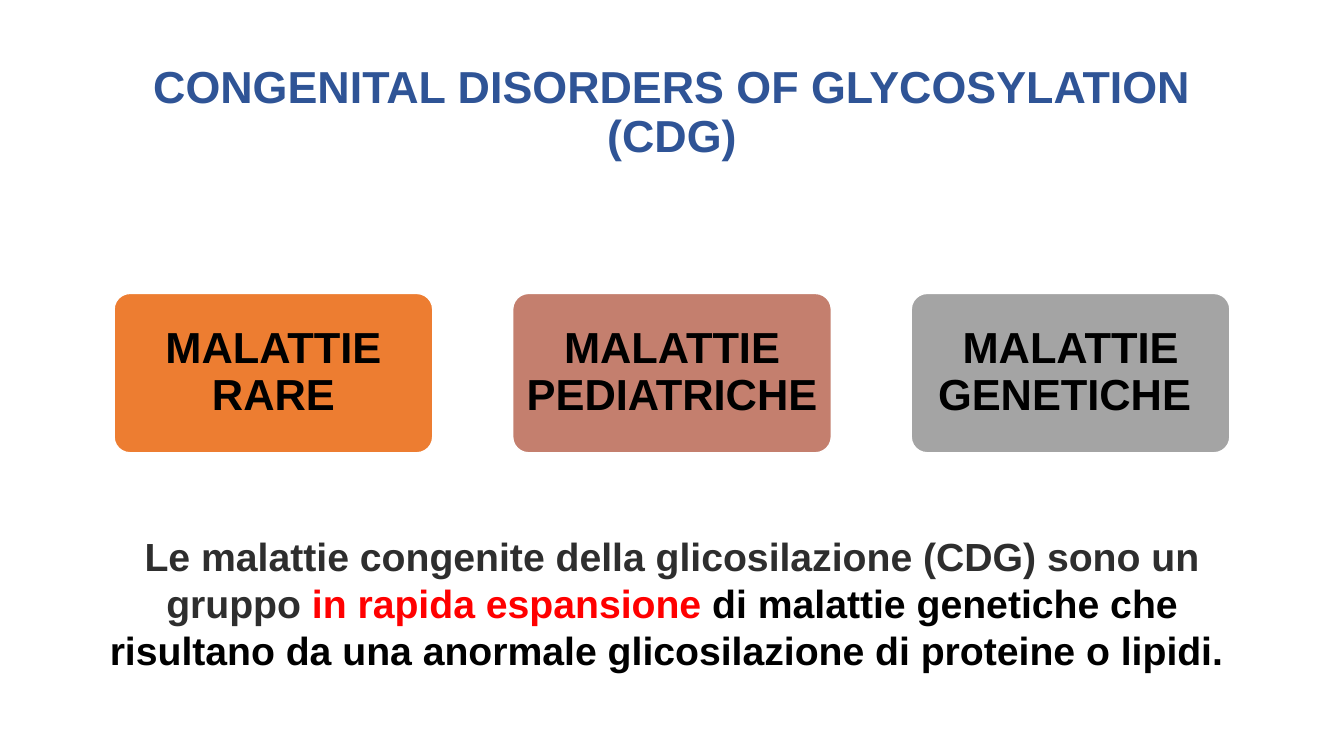
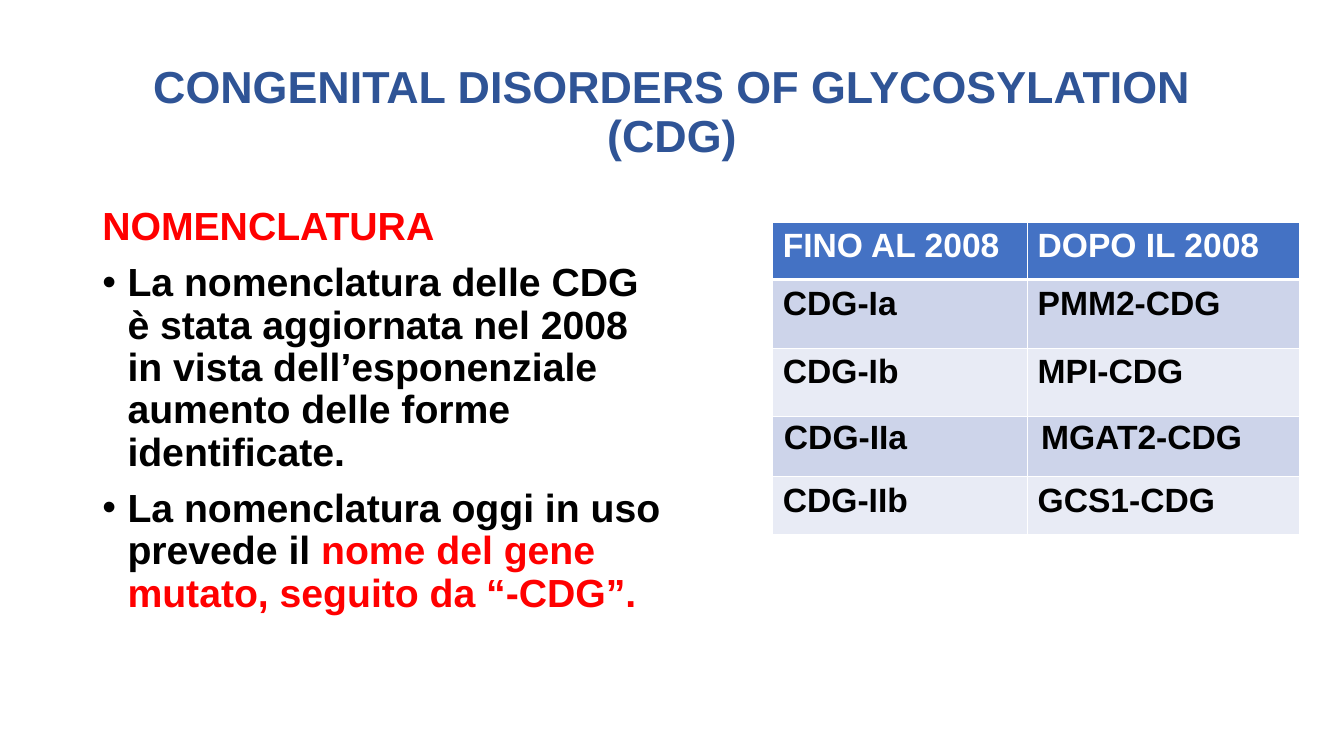
from dataclasses import dataclass

from lxml.etree import SubElement
from pptx import Presentation
from pptx.dml.color import RGBColor
from pptx.enum.shapes import MSO_SHAPE
from pptx.enum.text import MSO_ANCHOR, PP_ALIGN
from pptx.oxml.ns import qn
from pptx.util import Pt

FONT = "Arial"
COLORS = {
    "white": "FFFFFF", "black": "000000", "title": "2F5496", "red": "FF0000",
    "charcoal": "2E2E2E", "orange": "ED7D31", "rose": "C47F6E", "gray": "A4A4A4",
    "header": "4472C4", "band_dark": "CDD4EA", "band_light": "E8EBF5",
}


@dataclass(frozen=True)
class Span:
    text: str
    color: str = "black"


@dataclass(frozen=True)
class Category:
    label: str
    color: str


@dataclass(frozen=True)
class NameRow:
    old: str
    new: str
    height: float
    lefts: tuple[float, float] = (7.2, 7.2)
    top: float = 3.6


CATEGORIES = (
    Category("MALATTIE RARE", "orange"),
    Category("MALATTIE PEDIATRICHE ", "rose"),
    Category("MALATTIE GENETICHE ", "gray"),
)
NAME_ROWS = (
    NameRow("FINO AL 2008", "DOPO IL 2008", 41),
    NameRow("CDG-Ia", "PMM2-CDG", 49),
    NameRow("CDG-Ib", "MPI-CDG", 49),
    NameRow("CDG-IIa", "MGAT2-CDG", 43, (8, 9.7), 1.5),
    NameRow("CDG-IIb", "GCS1-CDG", 41),
)


def rgb(name: str) -> RGBColor:
    return RGBColor.from_string(COLORS[name])


def write(frame, spans: list[Span], *, size: float, align=PP_ALIGN.LEFT,
          spacing: float = 1.0, before: float = 0, bullet: bool = False,
          new_para: bool = False) -> None:
    para = frame.add_paragraph() if new_para else frame.paragraphs[0]
    para.alignment = align
    para.line_spacing = spacing
    para.space_before = Pt(before)
    if bullet:
        add_bullet(para)
    for span in spans:
        for index, line in enumerate(span.text.split("\n")):
            if index:
                para.add_line_break()
            run = para.add_run()
            run.text = line
            run.font.name = FONT
            run.font.size = Pt(size)
            run.font.bold = True
            run.font.color.rgb = rgb(span.color)


def add_bullet(para) -> None:
    properties = para._p.get_or_add_pPr()
    properties.set("marL", str(Pt(18)))
    properties.set("indent", str(-Pt(18)))
    color = SubElement(properties, qn("a:buClr"))
    SubElement(color, qn("a:srgbClr"), val=COLORS["black"])
    SubElement(properties, qn("a:buFont"), typeface=FONT)
    SubElement(properties, qn("a:buChar"), char="•")


def add_text_box(page, left: float, top: float, width: float, height: float,
                 anchor=MSO_ANCHOR.TOP):
    box = page.shapes.add_textbox(Pt(left), Pt(top), Pt(width), Pt(height))
    frame = box.text_frame
    frame.word_wrap = True
    frame.vertical_anchor = anchor
    return frame


def add_page(deck):
    page = deck.slides.add_slide(deck.slide_layouts[6])
    frame = add_text_box(page, 66, 28.75, 828, 104.4, MSO_ANCHOR.MIDDLE)
    write(frame, [Span("CONGENITAL DISORDERS OF GLYCOSYLATION\n(CDG)", "title")],
          size=32, align=PP_ALIGN.CENTER, spacing=0.9)
    return page


def add_category(page, category: Category, left: float, width: float) -> None:
    box = page.shapes.add_shape(MSO_SHAPE.ROUNDED_RECTANGLE, Pt(left), Pt(209.6),
                                Pt(width), Pt(113.8))
    box.adjustments[0] = 0.1
    box.shadow.inherit = False
    box.fill.solid()
    box.fill.fore_color.rgb = rgb(category.color)
    box.line.color.rgb = rgb("white")
    box.line.width = Pt(1)
    frame = box.text_frame
    frame.word_wrap = True
    frame.vertical_anchor = MSO_ANCHOR.MIDDLE
    frame.margin_left = frame.margin_right = Pt(4.5)
    frame.margin_top = frame.margin_bottom = Pt(3)
    write(frame, [Span(category.label)], size=31, align=PP_ALIGN.CENTER, spacing=0.9)


def add_borders(cell, top: float, bottom: float) -> None:
    properties = cell._tc.get_or_add_tcPr()
    for side, width in (("L", 1), ("R", 1), ("T", top), ("B", bottom)):
        line = SubElement(properties, qn(f"a:ln{side}"), w=str(Pt(width)))
        fill = SubElement(line, qn("a:solidFill"))
        SubElement(fill, qn("a:srgbClr"), val=COLORS["white"])


def add_name_table(page) -> None:
    widths = (182, 194)
    table = page.shapes.add_table(len(NAME_ROWS), len(widths), Pt(552), Pt(158.7),
                                  Pt(sum(widths)),
                                  Pt(sum(row.height for row in NAME_ROWS))).table
    for column, width in zip(table.columns, widths):
        column.width = Pt(width)
    for index, row in enumerate(NAME_ROWS):
        table.rows[index].height = Pt(row.height)
        is_header = index == 0
        band = "header" if is_header else "band_dark" if index % 2 else "band_light"
        for column, text in enumerate((row.old, row.new)):
            cell = table.cell(index, column)
            add_borders(cell, top=3 if index == 1 else 1, bottom=3 if is_header else 1)
            cell.fill.solid()
            cell.fill.fore_color.rgb = rgb(band)
            cell.margin_left = Pt(row.lefts[column])
            cell.margin_top = cell.margin_bottom = Pt(row.top)
            write(cell.text_frame, [Span(text, "white" if is_header else "black")], size=24)


def add_definition_page(deck) -> None:
    page = add_page(deck)
    width, pitch = 227.6, 284.7
    for index, category in enumerate(CATEGORIES):
        add_category(page, category, 480 - width / 2 + (index - 1) * pitch, width)
    frame = add_text_box(page, 60, 376.6, 840, 108.7)
    write(frame, [
        Span("Le malattie congenite della glicosilazione (CDG) sono un gruppo ", "charcoal"),
        Span("in rapida espansione ", "red"),
        Span("di malattie genetiche che risultano da una anormale glicosilazione "
             "di proteine o lipidi. "),
    ], size=28, align=PP_ALIGN.CENTER)


def add_naming_page(deck) -> None:
    page = add_page(deck)
    frame = add_text_box(page, 66, 144, 414, 342.7)
    write(frame, [Span("NOMENCLATURA", "red")], size=28, spacing=0.9)
    for spans in (
        [Span("La nomenclatura delle CDG è stata aggiornata nel 2008 in vista "
              "dell’esponenziale aumento delle forme identificate.")],
        [Span("La nomenclatura oggi in uso prevede il "),
         Span("nome del gene mutato, seguito da “-CDG”.", "red")],
    ):
        write(frame, spans, size=28, spacing=0.9, before=10, bullet=True, new_para=True)
    add_name_table(page)


def main() -> None:
    deck = Presentation()
    deck.slide_width, deck.slide_height = Pt(960), Pt(540)
    add_definition_page(deck)
    add_naming_page(deck)
    deck.save("out.pptx")


if __name__ == "__main__":
    main()
